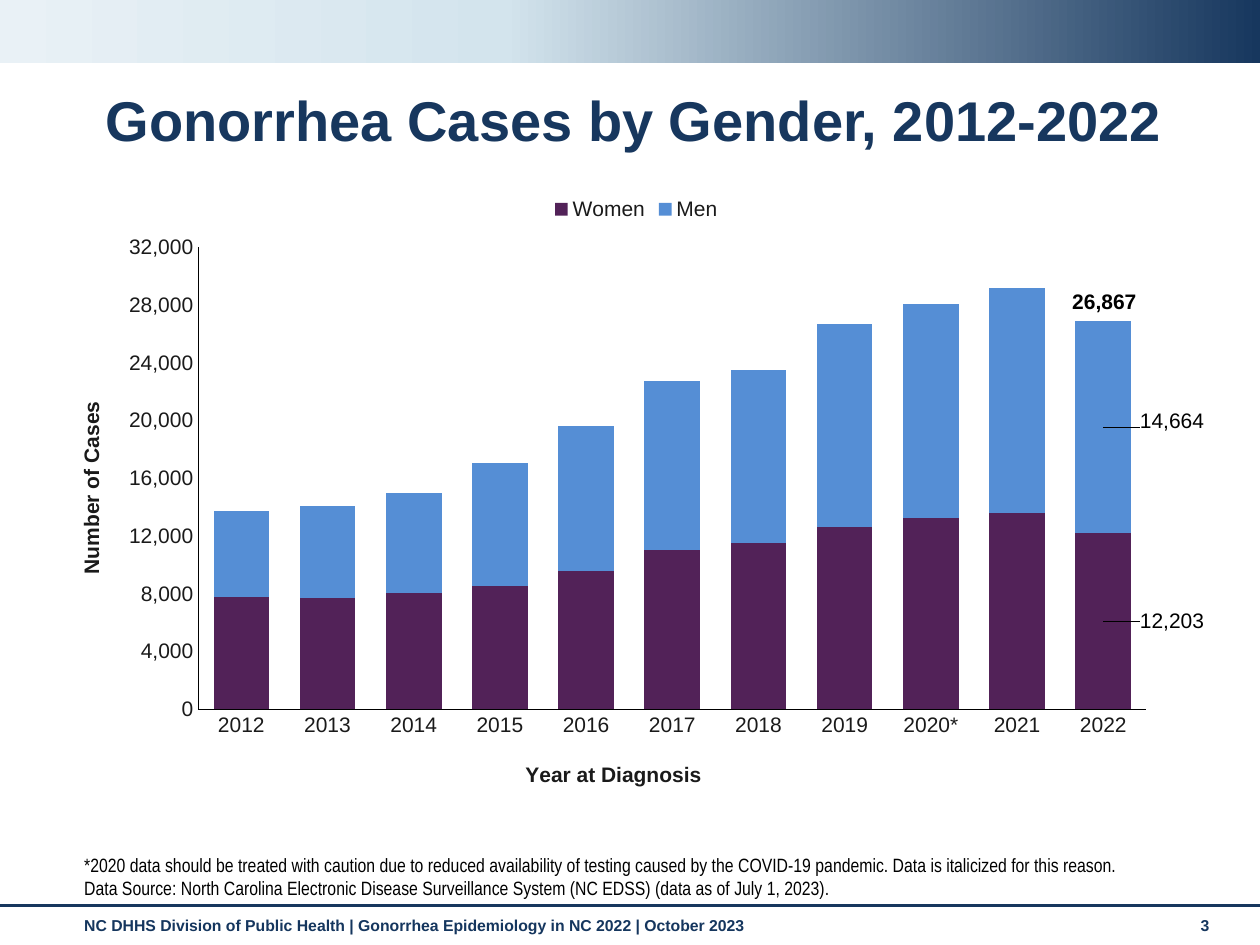
import copy
from dataclasses import dataclass

import pptx
import pptx.chart.data
import pptx.dml.color
import pptx.enum.chart
import pptx.enum.dml
import pptx.enum.shapes
import pptx.enum.text
import pptx.oxml
import pptx.oxml.ns
import pptx.util
from pptx.util import Inches


@dataclass(frozen=True)
class Theme:
    navy: str = "17375E"
    footer: str = "15365E"
    pale: str = "E9F1F6"
    sky: str = "D3E4ED"
    black: str = "000000"
    chart_text: str = "1A1A1A"
    women: str = "522258"
    men: str = "558ED5"
    font: str = "Arial"
    narrow_font: str = "Arial Narrow"
    title_size: int = 32
    chart_size: int = 12
    note_size: int = 11
    footer_size: int = 9


THEME = Theme()
YEARS = ["2012", "2013", "2014", "2015", "2016", "2017",
         "2018", "2019", "2020*", "2021", "2022"]
WOMEN = [7750, 7744, 8079, 8576, 9568, 11033, 11485, 12640, 13266, 13577, 12203]
MEN = [5962, 6362, 6896, 8475, 10029, 11696, 12051, 14067, 14809, 15600, 14664]


def rgb(color):
    return pptx.dml.color.RGBColor.from_string(color)


def set_font(font, size, color, bold=False, name=THEME.font):
    font.name = name
    font.size = pptx.util.Pt(size)
    font.bold = bold
    font.color.rgb = rgb(color)


def add_text(slide, box, lines, size, color, bold=False, name=THEME.font,
             anchor=pptx.enum.text.MSO_ANCHOR.TOP,
             alignment=pptx.enum.text.PP_ALIGN.LEFT):
    shape = slide.shapes.add_textbox(*map(Inches, box))
    frame = shape.text_frame
    frame.word_wrap = True
    frame.vertical_anchor = anchor
    frame.text = "\n".join(lines)
    for paragraph in frame.paragraphs:
        paragraph.alignment = alignment
        set_font(paragraph.font, size, color, bold, name)


def add_title(slide, text):
    title = slide.shapes.title
    title.left, title.top, title.width, title.height = map(Inches, (0.74, 0.68, 9, 0.6))
    title.text_frame.text = text
    title.text_frame.vertical_anchor = pptx.enum.text.MSO_ANCHOR.MIDDLE
    paragraph = title.text_frame.paragraphs[0]
    paragraph.alignment = pptx.enum.text.PP_ALIGN.LEFT
    paragraph.line_spacing = 0.9
    set_font(paragraph.font, THEME.title_size, THEME.navy, True)


def add_banner(slide):
    banner = slide.shapes.add_shape(pptx.enum.shapes.MSO_SHAPE.RECTANGLE,
                                    0, 0, Inches(10), Inches(0.5))
    banner.shadow.inherit = False
    banner.line.fill.background()
    banner.fill.gradient()
    stop_list = banner._element.spPr.find(".//" + pptx.oxml.ns.qn("a:gsLst"))
    stop_list.insert(1, copy.deepcopy(stop_list[0]))
    stops = [(0, THEME.pale), (0.4, THEME.sky), (1, THEME.navy)]
    for stop, (position, color) in zip(banner.fill.gradient_stops, stops):
        stop.position = position
        stop.color.rgb = rgb(color)
    banner.fill.gradient_angle = 0


def add_rule(slide, top):
    rule = slide.shapes.add_connector(pptx.enum.shapes.MSO_CONNECTOR.STRAIGHT,
                                      0, Inches(top), Inches(10), Inches(top))
    rule.line.color.rgb = rgb(THEME.navy)
    rule.line.width = pptx.util.Pt(1.75)
    rule._element.spPr.append(pptx.oxml.parse_xml(
        f'<a:effectLst {pptx.oxml.ns.nsdecls("a")}/>'))


def set_layout(parent, index, settings):
    for old in parent.findall(pptx.oxml.ns.qn("c:layout")):
        parent.remove(old)
    items = "".join(f'<c:{tag} val="{value}"/>' for tag, value in settings.items())
    parent.insert(index, pptx.oxml.parse_xml(
        f'<c:layout {pptx.oxml.ns.nsdecls("c")}>'
        f'<c:manualLayout>{items}</c:manualLayout></c:layout>'))


def format_axis(axis, title, x, y):
    axis.has_major_gridlines = False
    axis.major_tick_mark = pptx.enum.chart.XL_TICK_MARK.NONE
    axis.minor_tick_mark = pptx.enum.chart.XL_TICK_MARK.NONE
    axis.format.line.color.rgb = rgb(THEME.black)
    axis.format.line.width = pptx.util.Pt(0.75)
    frame = axis.axis_title.text_frame
    frame.text = title
    set_font(frame.paragraphs[0].font, THEME.chart_size, THEME.chart_text, True)
    set_layout(axis.axis_title._element, 1,
               {"xMode": "edge", "yMode": "edge", "x": x, "y": y})


def format_series(series, color, label_shift):
    series.format.fill.solid()
    series.format.fill.fore_color.rgb = rgb(color)
    series.data_labels.show_value = False
    label = series.points[len(YEARS) - 1].data_label
    label.position = pptx.enum.chart.XL_LABEL_POSITION.CENTER
    set_font(label.font, THEME.chart_size, THEME.black)
    point_label = series.data_labels._element.find(pptx.oxml.ns.qn("c:dLbl"))
    set_layout(point_label, 1, dict(zip("xy", label_shift)))


def add_cases_chart(slide):
    data = pptx.chart.data.CategoryChartData(number_format="#,##0")
    data.categories = YEARS
    data.add_series("Women", WOMEN)
    data.add_series("Men", MEN)
    chart = slide.shapes.add_chart(
        pptx.enum.chart.XL_CHART_TYPE.COLUMN_STACKED,
        *map(Inches, (0.5, 1.46, 9.1, 4.85)), data).chart
    set_font(chart.font, THEME.chart_size, THEME.chart_text)
    chart.has_title = False
    chart.has_legend = True
    chart.legend.position = pptx.enum.chart.XL_LEGEND_POSITION.TOP
    chart.legend.include_in_layout = False

    format_axis(chart.category_axis, "Year at Diagnosis", 0.4, 0.94)
    format_axis(chart.value_axis, "Number of Cases", 0.01, 0.35)
    chart.value_axis.minimum_scale = 0
    chart.value_axis.maximum_scale = 32000
    chart.value_axis.major_unit = 4000
    chart.value_axis.tick_labels.number_format = "#,##0"
    chart.value_axis.tick_labels.number_format_is_linked = False

    plot = chart.plots[0]
    plot.gap_width = 55
    plot.overlap = 100
    plot.vary_by_categories = False
    format_series(plot.series[0], THEME.women, (0.06, 0))
    format_series(plot.series[1], THEME.men, (0.06, -0.01))
    plot_area = chart._chartSpace.find(".//" + pptx.oxml.ns.qn("c:plotArea"))
    set_layout(plot_area, 0, {"layoutTarget": "inner", "xMode": "edge", "yMode": "edge",
                              "x": 0.118, "y": 0.104, "w": 0.827, "h": 0.756})


def main():
    presentation = pptx.Presentation()
    presentation.slide_width = Inches(10)
    presentation.slide_height = Inches(7.5)
    slide = presentation.slides.add_slide(presentation.slide_layouts[5])

    add_banner(slide)
    add_rule(slide, 7.19)
    add_text(slide, (0.57, 7.22, 8.74, 0.29),
             ["NC DHHS Division of Public Health | Gonorrhea Epidemiology in NC 2022 | October 2023"],
             THEME.footer_size, THEME.footer, True)
    add_text(slide, (9.43, 7.22, 0.44, 0.3), ["3"],
             THEME.footer_size, THEME.footer, True)
    add_title(slide, "Gonorrhea Cases by Gender, 2012-2022")
    add_cases_chart(slide)
    add_text(slide, (0.57, 6.83, 8.74, 0.36),
             ["*2020 data should be treated with caution due to reduced availability of testing "
              "caused by the COVID-19 pandemic. Data is italicized for this reason.",
              "Data Source: North Carolina Electronic Disease Surveillance System (NC EDSS) "
              "(data as of July 1, 2023)."],
             THEME.note_size, THEME.black, name=THEME.narrow_font,
             anchor=pptx.enum.text.MSO_ANCHOR.BOTTOM)
    add_text(slide, (8.31, 2.24, 0.91, 0.3), [f"{WOMEN[-1] + MEN[-1]:,}"],
             THEME.chart_size, THEME.black, True,
             alignment=pptx.enum.text.PP_ALIGN.CENTER)
    presentation.save("out.pptx")


if __name__ == "__main__":
    main()
